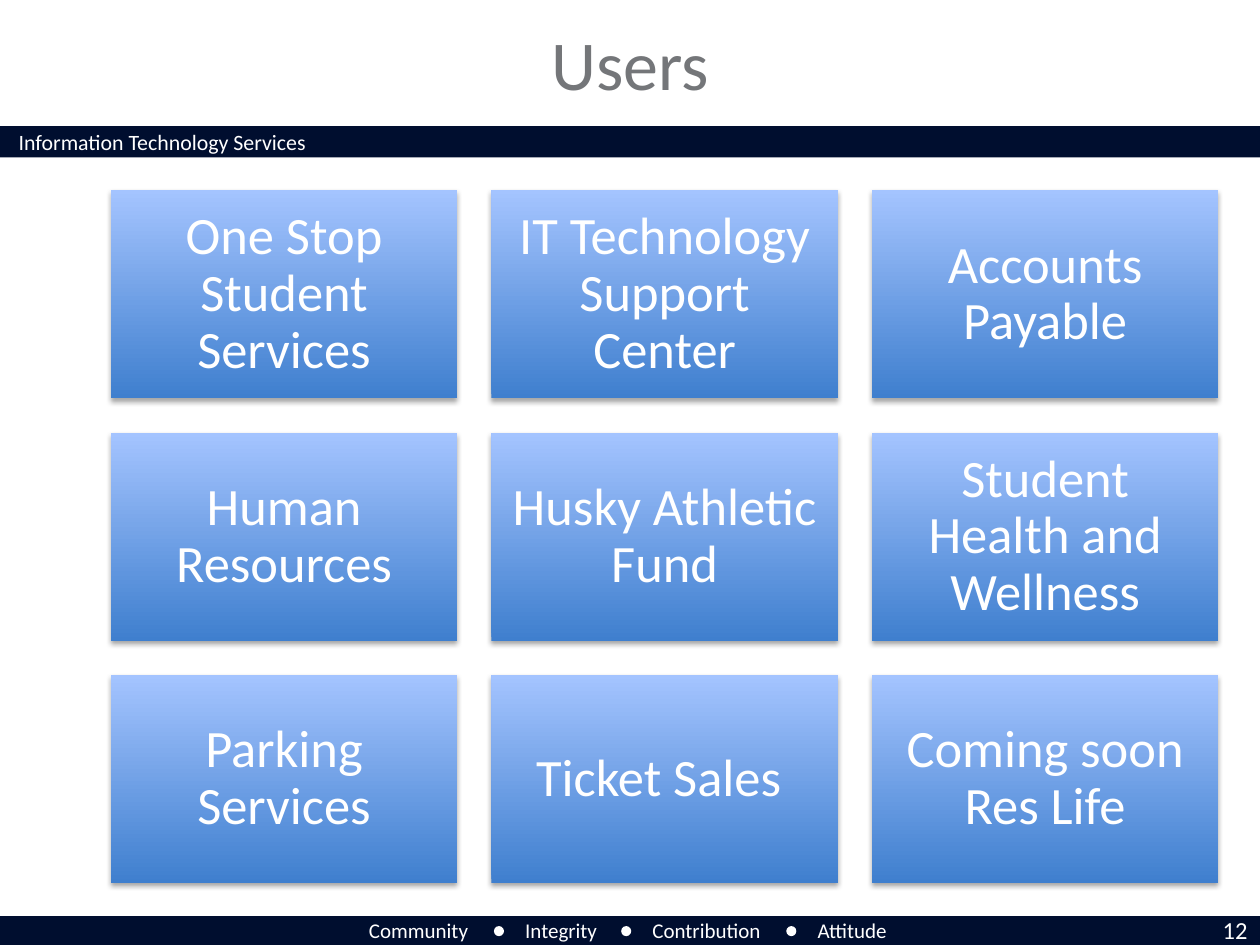
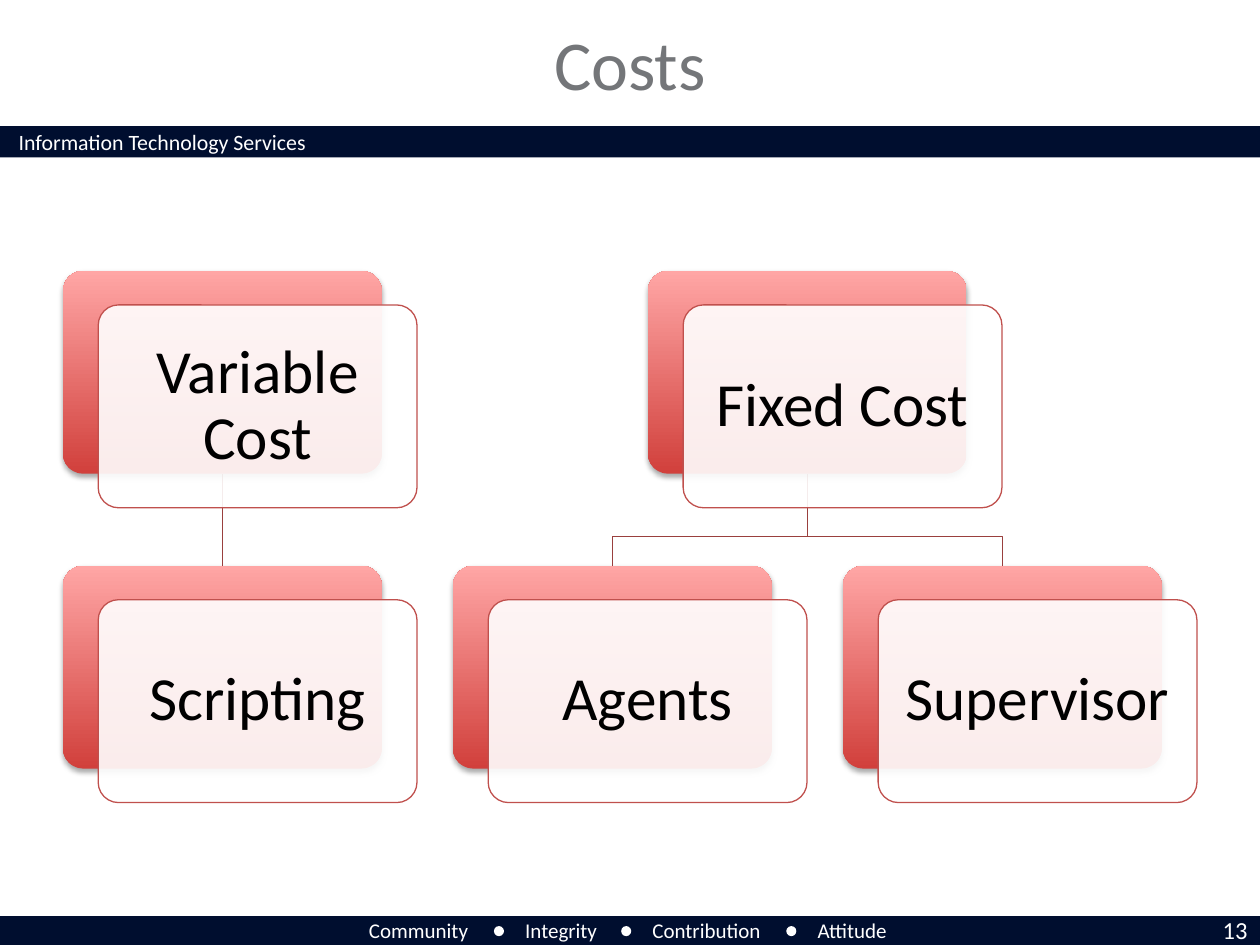
import collections

import lxml.etree
import pptx
import pptx.dml.color
import pptx.enum.shapes
import pptx.enum.text
import pptx.oxml.ns
import pptx.util

RGBColor = pptx.dml.color.RGBColor
Inches = pptx.util.Inches
Pt = pptx.util.Pt
qn = pptx.oxml.ns.qn
SHAPE = pptx.enum.shapes.MSO_SHAPE
ALIGN = pptx.enum.text.PP_ALIGN
ANCHOR = pptx.enum.text.MSO_ANCHOR

NAVY = RGBColor(0x00, 0x0E, 0x2F)
WHITE = RGBColor(0xFF, 0xFF, 0xFF)
BLACK = RGBColor(0x00, 0x00, 0x00)
TITLE_GREY = RGBColor(0x74, 0x76, 0x79)
BLUE_GRADIENT = (RGBColor(0x3F, 0x7F, 0xCE), RGBColor(0xA4, 0xC4, 0xFF))
RED_GRADIENT = (RGBColor(0xD1, 0x40, 0x3C), RGBColor(0xFF, 0xA6, 0xA5))
CARD_EDGE = RGBColor(0xC0, 0x50, 0x4D)
BRANCH_RED = RGBColor(0x9A, 0x40, 0x3E)

FONT = "Calibri"
TITLE_FORMAT = {"size": Pt(40), "color": TITLE_GREY}
UNIT_FORMAT = {"size": Pt(12.5), "color": WHITE}
VALUE_FORMAT = {"size": Pt(12), "color": WHITE}
NUMBER_FORMAT = {"size": Pt(14), "color": WHITE}
TILE_FORMAT = {"size": Pt(30), "color": WHITE}
CARD_FORMAT = {"size": Pt(35), "color": BLACK}

Box = collections.namedtuple("Box", "left top width height")

SLIDE_BOX = Box(0, 0, 10, 7.5)
TITLE_BOX = Box(1, 0.1, 8, 0.8)
HEADER_BOX = Box(0, 1, 10, 0.25)
FOOTER_BOX = Box(0, 7.27, 10, 0.25)
USERS_BOX = Box(0.88, 1.51, 8.79, 5.5)
COSTS_BOX = Box(0.5, 2.15, 9, 4.22)

VALUES = [("Community", 2.83, 1), ("Integrity", 4.07, 0.8),
          ("Contribution", 5.08, 1.1), ("Attitude", 6.39, 0.78)]
USERS = [
    ["One Stop Student Services", "IT Technology Support Center", "Accounts Payable"],
    ["Human Resources", "Husky Athletic Fund", "Student Health and Wellness"],
    ["Parking Services", "Ticket Sales ", "Coming soon Res Life"],
]
# Each cost: its column, its name, and its parts with their columns
COSTS = [
    (0, "Variable Cost", [(0, "Scripting")]),
    (1.5, "Fixed Cost", [(1, "Agents"), (2, "Supervisor")]),
]


def emu(box):
    return [Inches(length) for length in box]


def write(shape, text, text_format, align=ALIGN.LEFT, spacing=1.0):
    paragraph = shape.text_frame.paragraphs[0]
    paragraph.text = text
    paragraph.alignment = align
    paragraph.line_spacing = spacing
    paragraph.font.name = FONT
    for name, value in text_format.items():
        if name == "color":
            paragraph.font.color.rgb = value
        else:
            setattr(paragraph.font, name, value)


def set_frame(shape, margin):
    frame = shape.text_frame
    settings = {"word_wrap": True, "vertical_anchor": ANCHOR.MIDDLE}
    for side in ("left", "right", "top", "bottom"):
        settings["margin_" + side] = Inches(margin)
    for name, value in settings.items():
        setattr(frame, name, value)


def add_text(slide, box, text, text_format, align=ALIGN.LEFT, wrap=True):
    shape = slide.shapes.add_textbox(*emu(box))
    shape.text_frame.word_wrap = wrap
    write(shape, text, text_format, align)
    return shape


def add_plain(slide, kind, box, color):
    shape = slide.shapes.add_shape(kind, *emu(box))
    shape.shadow.inherit = False
    shape.fill.solid()
    shape.fill.fore_color.rgb = color
    shape.line.fill.background()
    return shape


def add_raised(slide, kind, box, gradient):
    """Add a shape with a vertical gradient and a soft shadow below it."""
    shape = add_plain(slide, kind, box, gradient[0])
    shape.fill.gradient()
    shape.fill.gradient_angle = 90
    for stop, color in zip(shape.fill.gradient_stops, gradient):
        stop.color.rgb = color
    effects = shape._element.spPr.find(qn("a:effectLst"))
    shadow = lxml.etree.SubElement(
        effects, qn("a:outerShdw"), blurRad=str(Pt(3.1)), dist=str(Pt(1.8)),
        dir="5400000", rotWithShape="0")
    color = lxml.etree.SubElement(shadow, qn("a:srgbClr"), val=str(BLACK))
    lxml.etree.SubElement(color, qn("a:alpha"), val="35000")
    return shape


def add_header(slide, box, title):
    title_shape = add_text(slide, TITLE_BOX, title, TITLE_FORMAT, ALIGN.CENTER)
    title_shape.text_frame.vertical_anchor = ANCHOR.MIDDLE
    add_plain(slide, SHAPE.RECTANGLE, box, NAVY)
    add_text(slide, Box(box.left + 0.05, box.top - 0.03, 3.4, 0.32),
             "Information Technology Services", UNIT_FORMAT)


def add_footer(slide, box, number):
    add_plain(slide, SHAPE.RECTANGLE, box, NAVY)
    for index, (value, left, width) in enumerate(VALUES):
        add_text(slide, Box(box.left + left, box.top - 0.04, width, 0.3),
                 value, VALUE_FORMAT, wrap=False)
        if index:
            add_plain(slide, SHAPE.OVAL,
                      Box(box.left + left - 0.15, box.top + 0.08, 0.08, 0.08), WHITE)
    add_text(slide, Box(box.left + box.width - 0.76, box.top - 0.06, 0.76, 0.34),
             str(number), NUMBER_FORMAT, ALIGN.RIGHT)


def add_tile_grid(slide, box, rows, gap=0.27):
    width = (box.width + gap) / len(rows[0]) - gap
    height = (box.height + gap) / len(rows) - gap
    for row, names in enumerate(rows):
        for column, name in enumerate(names):
            tile_box = Box(box.left + column * (width + gap),
                           box.top + row * (height + gap), width, height)
            tile = add_raised(slide, SHAPE.RECTANGLE, tile_box, BLUE_GRADIENT)
            set_frame(tile, 0.12)
            write(tile, name, TILE_FORMAT, ALIGN.CENTER, 0.9)


def add_card(slide, box, name, shift):
    """Add a red back plate and a translucent label plate shifted over it."""
    back = add_raised(slide, SHAPE.ROUNDED_RECTANGLE, box, RED_GRADIENT)
    front_box = box._replace(left=box.left + shift[0], top=box.top + shift[1])
    front = add_plain(slide, SHAPE.ROUNDED_RECTANGLE, front_box, WHITE)
    for plate in (back, front):
        plate.adjustments[0] = 0.1
    color = front._element.spPr.find(qn("a:solidFill"))[0]
    lxml.etree.SubElement(color, qn("a:alpha"), val="90000")
    front.line.color.rgb = CARD_EDGE
    front.line.width = Pt(0.75)
    set_frame(front, 0.15)
    write(front, name, CARD_FORMAT, ALIGN.CENTER, 0.9)


def add_branch(slide, parent, child):
    """Join the bottom of a parent card to the top of a child card."""
    start_x, end_x = (Inches(card.left + card.width / 2) for card in (parent, child))
    start_y, end_y = Inches(parent.top + parent.height), Inches(child.top)
    if start_x == end_x:
        branch = slide.shapes.add_connector(
            pptx.enum.shapes.MSO_CONNECTOR.STRAIGHT, start_x, start_y, end_x, end_y)
        lxml.etree.SubElement(branch._element.spPr, qn("a:effectLst"))
    else:
        bend_y = start_y + round((end_y - start_y) * 0.68)
        builder = slide.shapes.build_freeform(start_x, start_y)
        builder.add_line_segments(
            [(start_x, bend_y), (end_x, bend_y), (end_x, end_y)], close=False)
        branch = builder.convert_to_shape()
        branch.shadow.inherit = False
        branch.fill.background()
    branch.line.color.rgb = BRANCH_RED
    branch.line.width = Pt(0.75)


def add_cost_tree(slide, box, costs):
    shift = (0.28, 0.27)
    width, height = 2.53, 1.61
    column_step = (box.width - width - shift[0]) / 2
    row_step = box.height - height - shift[1]

    def place(column, row):
        return Box(box.left + column * column_step, box.top + row * row_step,
                   width, height)

    for column, _, parts in costs:
        for part_column, _ in parts:
            add_branch(slide, place(column, 0), place(part_column, 1))
    for column, cost, parts in costs:
        add_card(slide, place(column, 0), cost, shift)
        for part_column, part in parts:
            add_card(slide, place(part_column, 1), part, shift)


def add_slide(presentation, title, number):
    slide = presentation.slides.add_slide(presentation.slide_layouts[6])
    add_header(slide, HEADER_BOX, title)
    add_footer(slide, FOOTER_BOX, number)
    return slide


def main():
    presentation = pptx.Presentation()
    presentation.slide_width = Inches(SLIDE_BOX.width)
    presentation.slide_height = Inches(SLIDE_BOX.height)
    add_tile_grid(add_slide(presentation, "Users", 12), USERS_BOX, USERS)
    add_cost_tree(add_slide(presentation, "Costs", 13), COSTS_BOX, COSTS)
    presentation.save("out.pptx")


if __name__ == "__main__":
    main()
